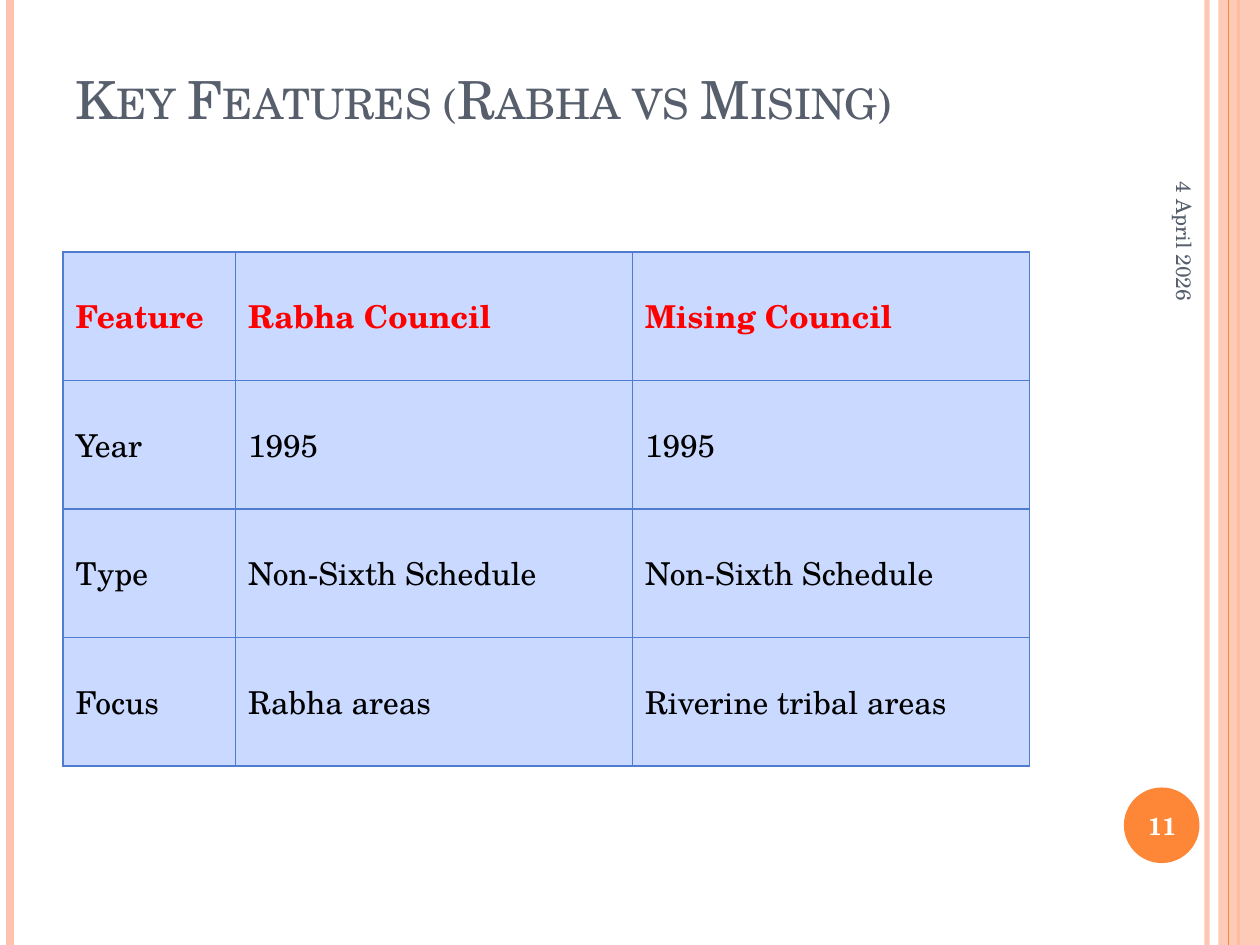
from dataclasses import dataclass

from lxml import etree
from pptx import Presentation
from pptx.dml.color import RGBColor
from pptx.enum.shapes import MSO_CONNECTOR, MSO_SHAPE
from pptx.enum.text import MSO_ANCHOR, PP_ALIGN
from pptx.oxml.ns import qn
from pptx.util import Inches, Pt

STRAIGHT = MSO_CONNECTOR.STRAIGHT
RECT, OVAL = MSO_SHAPE.RECTANGLE, MSO_SHAPE.OVAL
MIDDLE, BOTTOM = MSO_ANCHOR.MIDDLE, MSO_ANCHOR.BOTTOM
LEFT, CENTER, RIGHT = PP_ALIGN.LEFT, PP_ALIGN.CENTER, PP_ALIGN.RIGHT

FONT = "TeX Gyre Schola"
PEACH = RGBColor(0xFE, 0xC3, 0xAE)
ORANGE = RGBColor(0xFE, 0x86, 0x37)
SLATE = RGBColor(0x57, 0x5F, 0x6D)
WHITE = RGBColor(0xFF, 0xFF, 0xFF)
BLACK = RGBColor(0, 0, 0)
RED = RGBColor(0xFF, 0, 0)
CELL_BLUE = RGBColor(0xC9, 0xD9, 0xFF)
BORDER_BLUE = RGBColor(0x4F, 0x7C, 0xCF)

SLIDE_W, SLIDE_H = 10, 7.5
COL_WIDTHS = (1.37, 3.15, 3.15)
ROW_HEIGHT = 1.02
ROWS = (
    ("Feature", "Rabha Council", "Mising Council"),
    ("Year", "1995", "1995"),
    ("Type", "Non-Sixth Schedule", "Non-Sixth Schedule"),
    ("Focus", "Rabha areas", "Riverine tribal areas"),
)


@dataclass
class Stripe:
    x: float
    color: RGBColor
    weight: float
    opacity: int = 100


@dataclass
class Label:
    text: str
    box: tuple[float, float, float, float]
    size: float
    color: RGBColor
    bold: bool = False
    small_caps: bool = False
    align: PP_ALIGN = LEFT
    anchor: MSO_ANCHOR = MIDDLE
    rotation: float = 0


LEFT_STRIPE = Stripe(0.08, PEACH, 4.5)
BAND_EDGE = Stripe(9.58, PEACH, 3, 93)
BAND_UNDERLINE = Stripe(9.83, ORANGE, 1.5)
BAND_LINE = Stripe(9.75, ORANGE, 0.75)

LABELS = (
    Label("Key Features (Rabha vs Mising)", (0.5, 0.3, 8.17, 0.78), 30, SLATE,
          small_caps=True, anchor=BOTTOM),
    Label("4 April 2026", (8.3, 1.18, 2.2, 0.42), 12, SLATE,
          align=RIGHT, rotation=90),
    Label("11", (8.89, 6.27, 0.67, 0.57), 14, WHITE, bold=True, align=CENTER),
)


def set_opacity(element, percent: int) -> None:
    """Set the opacity of the first RGB colour inside element."""
    color = next(element.iter(qn("a:srgbClr")))
    etree.SubElement(color, qn("a:alpha"), val=str(percent * 1000))


def add_run(p, text: str, size: float, color: RGBColor, bold: bool):
    r = p.add_run()
    r.text = text
    r.font.name = FONT
    r.font.size = Pt(size)
    r.font.bold = bold
    r.font.color.rgb = color
    return r


def add_stripe(s, stripe: Stripe) -> None:
    x = Inches(stripe.x)
    line = s.shapes.add_connector(STRAIGHT, x, 0, x, Inches(SLIDE_H))
    line.line.color.rgb = stripe.color
    line.line.width = Pt(stripe.weight)
    sp_pr = line._element.spPr
    if stripe.opacity < 100:
        set_opacity(sp_pr, stripe.opacity)
    etree.SubElement(sp_pr, qn("a:effectLst"))


def add_plain_shape(s, kind: MSO_SHAPE, x: float, y: float, w: float, h: float,
                    color: RGBColor):
    sp = s.shapes.add_shape(kind, Inches(x), Inches(y), Inches(w), Inches(h))
    sp.shadow.inherit = False
    sp.fill.solid()
    sp.fill.fore_color.rgb = color
    sp.line.fill.background()
    return sp


def add_label(s, label: Label) -> None:
    sp = s.shapes.add_textbox(*map(Inches, label.box))
    sp.rotation = label.rotation
    tf = sp.text_frame
    tf.word_wrap = True
    tf.vertical_anchor = label.anchor
    p = tf.paragraphs[0]
    p.alignment = label.align
    r = add_run(p, label.text, label.size, label.color, label.bold)
    if label.small_caps:
        r._r.get_or_add_rPr().set("cap", "small")


def add_borders(cell) -> None:
    tc_pr = cell._tc.get_or_add_tcPr()
    for side in ("lnL", "lnR", "lnT", "lnB"):
        ln = etree.SubElement(tc_pr, qn(f"a:{side}"), w=str(Pt(1)))
        fill = etree.SubElement(ln, qn("a:solidFill"))
        etree.SubElement(fill, qn("a:srgbClr"), val=str(BORDER_BLUE))


def add_feature_table(s, x: float, y: float) -> None:
    table = s.shapes.add_table(
        len(ROWS), len(COL_WIDTHS), Inches(x), Inches(y),
        Inches(sum(COL_WIDTHS)), Inches(ROW_HEIGHT * len(ROWS))).table
    for column, width in zip(table.columns, COL_WIDTHS):
        column.width = Inches(width)
    for i, texts in enumerate(ROWS):
        table.rows[i].height = Inches(ROW_HEIGHT)
        header = i == 0
        for j, text in enumerate(texts):
            cell = table.cell(i, j)
            add_borders(cell)
            cell.fill.solid()
            cell.fill.fore_color.rgb = CELL_BLUE
            cell.vertical_anchor = MIDDLE
            add_run(cell.text_frame.paragraphs[0], text, 18,
                    RED if header else BLACK, header)


def main() -> None:
    prs = Presentation()
    prs.slide_width, prs.slide_height = Inches(SLIDE_W), Inches(SLIDE_H)
    s = prs.slides.add_slide(prs.slide_layouts[6])

    for stripe in (BAND_EDGE, LEFT_STRIPE, BAND_UNDERLINE):
        add_stripe(s, stripe)
    band = add_plain_shape(s, RECT, 9.67, 0, 0.33, SLIDE_H, PEACH)
    set_opacity(band._element.spPr, 87)
    add_stripe(s, BAND_LINE)
    add_plain_shape(s, OVAL, 8.92, 6.25, 0.6, 0.6, ORANGE)

    add_feature_table(s, 0.5, 2)
    for label in LABELS:
        add_label(s, label)
    prs.save("out.pptx")


if __name__ == "__main__":
    main()
